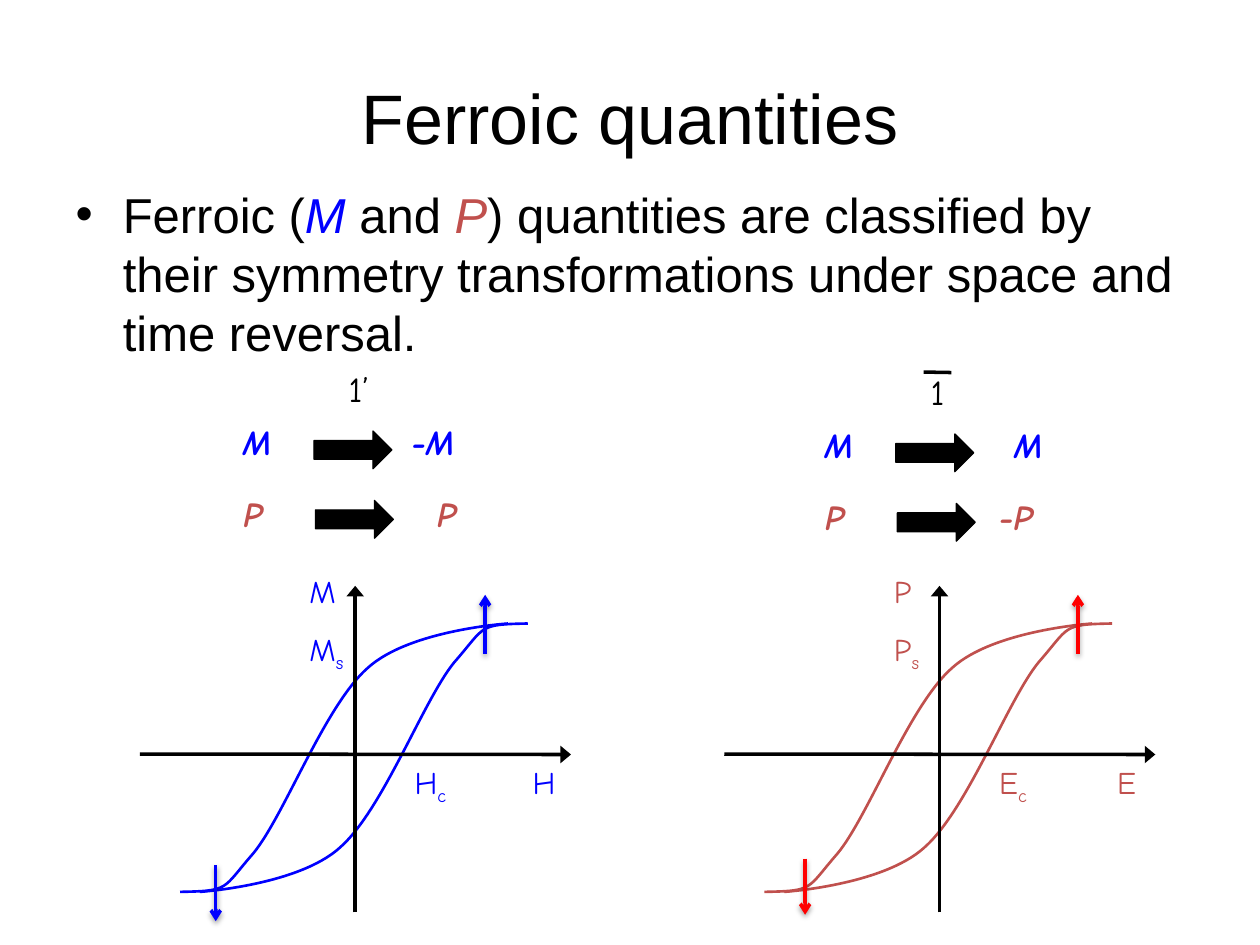
from lxml.etree import SubElement as Sub
from pptx import Presentation
from pptx.dml.color import RGBColor as RGB
from pptx.enum.shapes import MSO_CONNECTOR as Conn, MSO_SHAPE as Shape
from pptx.enum.text import MSO_ANCHOR as Anchor, MSO_AUTO_SIZE as Fit, PP_ALIGN as Align
from pptx.oxml.ns import qn
from pptx.util import Cm, Pt

THEME = dict(
    black="000000", blue="0000FF", rose="C0504D", red="FF0000",
    body="Arial", hand="Comic Neue",
    title=40, text=28, sign=20, label=18, axis=2, loop=1.5,
)

# Content: runs are (text, colour, style); lengths are in cm
TITLE = [("Ferroic quantities", "black", "")]
BODY = [
    ("Ferroic (", "black", ""), ("M ", "blue", "i"), ("and ", "black", ""),
    ("P", "rose", "i"),
    (") quantities are classified by their symmetry transformations "
     "under space and time reversal.", "black", ""),
]
# Operation, shift, then (from, to, x of result, colour) for each row
MAPS = [
    ("1’", 0, 0, [("M", "-M", 8.05, "blue"), ("P", "P", 8.56, "rose")]),
    ("1", 11.73, 0.06, [("M", "M", 20.2, "blue"), ("P", "-P", 19.89, "rose")]),
]
WIDTH = {"M": 1.4, "P": 1.14, "-M": 1.83, "-P": 1.57}
ROWS = [(8.36, 6.33, 8.69), (9.8, 6.36, 10.09)]  # label y, arrow x, arrow y
BAR = (18.62, 7.5, 19.18, 7.51)
# Shift, colour, order and field with their label widths
PLOTS = [
    (0, "blue", ("M", 1.07, 1.3), ("H", 1.02, 1.22)),
    (11.78, "rose", ("P", 0.84, 1.07), ("E", 0.91, 1.14)),
]
AXES = [(2.82, 15.2, 11.51, 15.21), (7.16, 18.39, 7.16, 11.81)]
# Start, then two handles and an end for each arc
CURVE = [
    (3.63, 17.98), (4.65, 17.96), (4.47, 17.93), (5.11, 17.2),
    (5.74, 16.43), (6.55, 14.22), (7.42, 13.46),
    (8.26, 12.7), (10.24, 12.57), (10.24, 12.57),
]
TWIN = (14.27, 30.55)  # twice the centre of the loop
SPINS = [
    ("red", 16.23, 17.31, 18.44), ("blue", 4.35, 17.44, 18.57),
    ("red", 21.73, 13.18, 11.99), ("blue", 9.78, 13.18, 11.99),
]


def ink(name):
    return RGB.from_string(THEME[name])


def write(frame, runs, face, size):
    para = frame.paragraphs[0]
    for text, color, style in runs:
        run = para.add_run()
        run.text = text
        font = run.font
        font.name, font.size = THEME[face], Pt(THEME[size])
        font.color.rgb = ink(color)
        font.bold, font.italic = "b" in style, "i" in style
        if "s" in style:
            font._element.set("baseline", "-25000")
    return para


def label(group, x, y, wide, runs, size, wrap=False):
    tall = 1.12 if size == "sign" else 1.02
    frame = group.shapes.add_textbox(Cm(x), Cm(y), Cm(wide), Cm(tall)).text_frame
    frame.word_wrap, frame.auto_size = wrap, Fit.SHAPE_TO_FIT_TEXT
    write(frame, runs, "hand", size)


def line(home, ends, color="black", head=None, glow=False):
    rule = home.shapes.add_connector(Conn.STRAIGHT, *map(Cm, ends))
    rule.line.color.rgb, rule.line.width = ink(color), Pt(THEME["axis"])
    if head:
        wide = "lg" if head == "triangle" else "med"
        Sub(rule.line._get_or_add_ln(), qn("a:tailEnd"), type=head, w=wide, len="med")
    fx = Sub(rule._element.spPr, qn("a:effectLst"))
    if glow:
        shade = Sub(fx, qn("a:outerShdw"), blurRad=str(Pt(3.1)), dist=str(Pt(1.6)),
                    dir="5400000", rotWithShape="0")
        tint = Sub(shade, qn("a:srgbClr"), val=THEME["black"])
        Sub(tint, qn("a:alpha"), val="38000")


def branch(group, knots, color):
    dots = [(Cm(x), Cm(y)) for x, y in knots]
    pen = group.shapes.build_freeform(*dots[0])
    pen.add_line_segments(dots[1:], close=False)
    form = pen.convert_to_shape()
    # Join every three straight steps into one cubic arc
    steps = list(form._element.iter(qn("a:lnTo")))
    route = steps[0].getparent()
    for n in range(0, len(steps), 3):
        arc = Sub(route, qn("a:cubicBezTo"))
        for step in steps[n:n + 3]:
            arc.append(step[0])
            route.remove(step)
    form.shadow.inherit = False
    form.fill.background()
    form.line.color.rgb, form.line.width = ink(color), Pt(THEME["loop"])


def plot(slide, dx, color, order, field):
    group = slide.shapes.add_group_shape()
    rise = [(x + dx, y) for x, y in CURVE]
    fall = [(TWIN[0] - x + dx, TWIN[1] - y) for x, y in CURVE]
    for knots in (rise, fall):
        branch(group, knots, color)
    for x, y, x2, y2 in AXES:
        line(group, (x + dx, y, x2 + dx, y2), head="triangle")
    for (name, wide, long), sub, far, near in (
        (order, "s", (5.99, 11.4), (5.99, 12.58)),
        (field, "c", (10.49, 15.25), (8.11, 15.25)),
    ):
        main = (name, color, "")
        label(group, far[0] + dx, far[1], wide, [main], "label")
        label(group, near[0] + dx, near[1], long, [main, (sub, color, "s")], "label")


def chart(slide, sign, dx, dy, rows):
    group = slide.shapes.add_group_shape()
    label(group, 6.78 + dx, 7.29 + dy, 1.35, [(sign, "black", "")], "sign", True)
    for (old, new, x, color), (y, ax, ay) in zip(rows, ROWS):
        for text, left in ((old, 4.65 + dx), (new, x)):
            label(group, left, y + dy, WIDTH[text], [(text, color, "bi")], "sign")
        arrow = group.shapes.add_shape(
            Shape.RIGHT_ARROW, Cm(ax + dx), Cm(ay + dy), Cm(1.57), Cm(0.76))
        arrow.shadow.inherit = False
        arrow.fill.solid()
        arrow.fill.fore_color.rgb = arrow.line.color.rgb = ink("black")
        arrow.line.width = Pt(0.75)
    return group


def place(holder, box, runs, size, anchor):
    holder.left, holder.top, holder.width, holder.height = map(Cm, box)
    frame = holder.text_frame
    frame.word_wrap, frame.auto_size = True, Fit.NONE
    frame.vertical_anchor = anchor
    return write(frame, runs, "body", size)


def main():
    deck = Presentation()
    deck.slide_width, deck.slide_height = Cm(25.4), Cm(19.05)
    slide = deck.slides.add_slide(deck.slide_layouts[1])

    # Title and bullet
    head = place(slide.shapes.title, (1.27, 0.76, 22.86, 3.18), TITLE, "title",
                 Anchor.MIDDLE)
    head.alignment = Align.CENTER
    place(slide.placeholders[1], (1.27, 3.59, 22.86, 4.24), BODY, "text", Anchor.TOP)

    # Hysteresis loops
    for item in PLOTS:
        plot(slide, *item)

    # Symmetry operations, the last one barred
    for item in MAPS:
        group = chart(slide, *item)
    line(group, BAR)

    # Spin arrows
    for color, x, start, end in SPINS:
        line(slide, (x, start, x, end), color, "arrow", True)
    deck.save("out.pptx")


if __name__ == "__main__":
    main()
